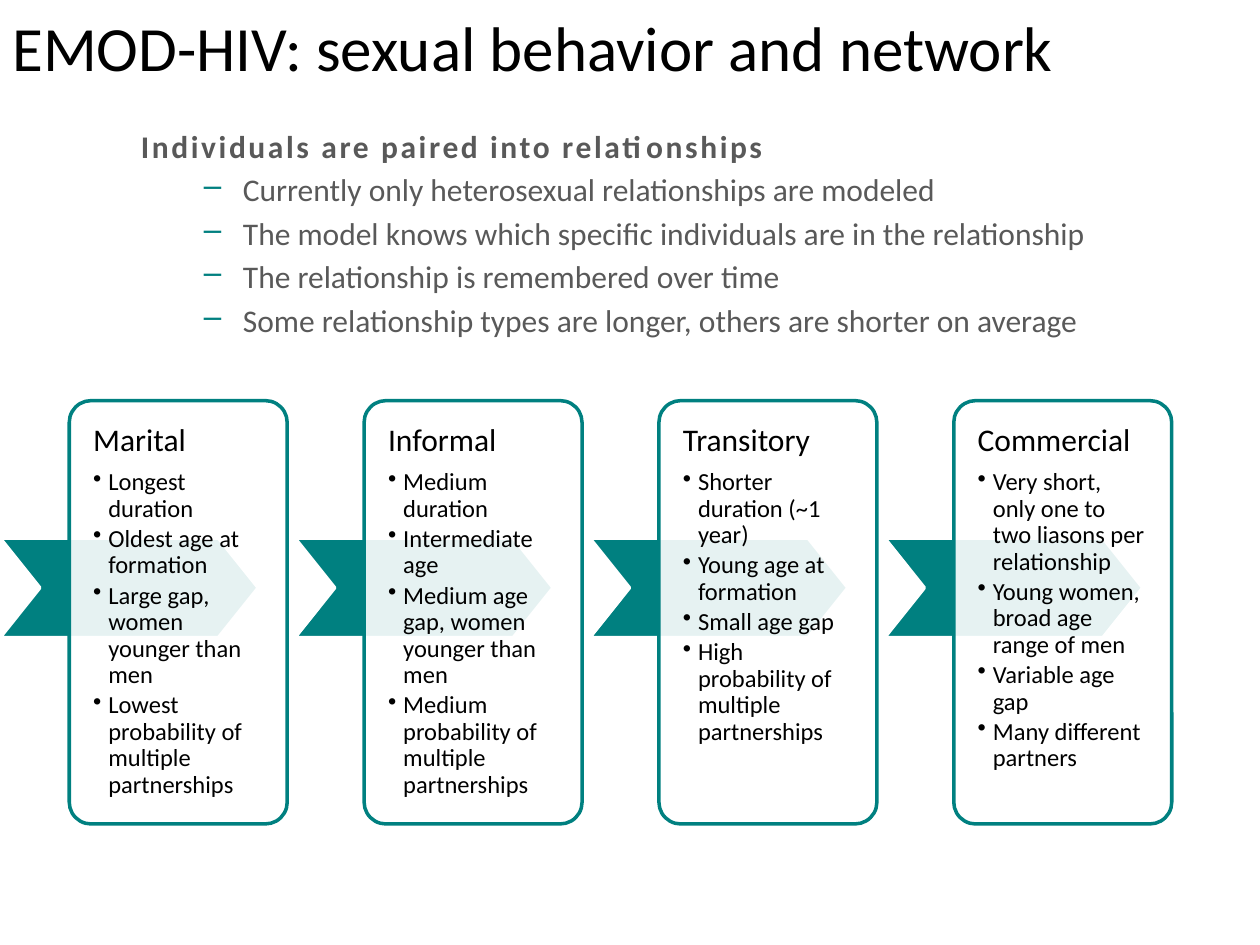
"""Build the slide on sexual behavior and relationship types in EMOD-HIV."""
from lxml.etree import SubElement
from pptx import Presentation
from pptx.dml.color import RGBColor
from pptx.enum.shapes import MSO_SHAPE as Shape
from pptx.enum.text import MSO_ANCHOR as Anchor
from pptx.oxml.ns import qn
from pptx.util import Inches, Pt

BLACK = RGBColor(0x00, 0x00, 0x00)
WHITE = RGBColor(0xFF, 0xFF, 0xFF)
GRAY = RGBColor(0x59, 0x59, 0x59)
TEAL = RGBColor(0x00, 0x80, 0x80)

TITLE = "EMOD-HIV: sexual behavior and network"
HEADING = "Individuals are paired into relationships"
POINTS = [
    "Currently only heterosexual relationships are modeled",
    "The model knows which specific individuals are in the relationship",
    "The relationship is remembered over time",
    "Some relationship types are longer, others are shorter on average",
]
TYPES = {
    "Marital": ["Longest duration", "Oldest age at formation",
                "Large gap, women younger than men",
                "Lowest probability of multiple partnerships"],
    "Informal": ["Medium duration", "Intermediate age",
                 "Medium age gap, women younger than men",
                 "Medium probability of multiple partnerships"],
    "Transitory": ["Shorter duration (~1 year)", "Young age at formation",
                   "Small age gap",
                   "High probability of multiple partnerships"],
    "Commercial": ["Very short, only one to two liasons per relationship",
                   "Young women, broad age range of men",
                   "Variable age gap", "Many different partners"],
}
PITCH = 2.34


def set_attrs(obj, values):
    for name, value in values.items():
        setattr(obj, name, value)


def add_box(shapes, box, inset=None):
    tf = shapes.add_textbox(*map(Inches, box)).text_frame
    set_attrs(tf, {"word_wrap": True, "vertical_anchor": Anchor.TOP})
    if inset is not None:
        sides = ("left", "top", "right", "bottom")
        set_attrs(tf, {f"margin_{side}": Inches(inset) for side in sides})
    return tf


def add_text(tf, text, size, color, spacing, bold=False):
    p = tf.paragraphs[0]
    if p.runs:
        p = tf.add_paragraph()
    set_attrs(p, spacing)
    r = p.add_run()
    r.text = text
    set_attrs(r.font, {"name": "Calibri", "size": Pt(size), "bold": bold})
    r.font.color.rgb = color
    return p


def set_bullet(p, char, margin, hanging, color=None):
    p.level = 1
    pPr = p._p.get_or_add_pPr()
    pPr.set("marL", str(Inches(margin)))
    pPr.set("indent", str(-Inches(hanging)))
    if color is not None:
        clr = SubElement(pPr, qn("a:buClr"))
        SubElement(clr, qn("a:srgbClr"), val=str(color))
    SubElement(pPr, qn("a:buChar"), char=char)


def add_shape(shapes, kind, box, adj, fill, line):
    sp = shapes.add_shape(kind, *map(Inches, box))
    sp.adjustments[0] = adj
    sp.shadow.inherit = False
    sp.fill.solid()
    sp.fill.fore_color.rgb = fill
    sp.line.color.rgb = line
    sp.line.width = Pt(2)
    return sp


def set_alpha(sp, percent):
    clr = sp._element.spPr.find(qn("a:solidFill")).find(qn("a:srgbClr"))
    SubElement(clr, qn("a:alpha"), val=str(percent * 1000))


def add_type(shapes, x, name, traits):
    add_shape(shapes, Shape.CHEVRON, (x, 4.27, 2.05, 0.79), 0.4, TEAL, WHITE)
    card = add_shape(shapes, Shape.ROUNDED_RECTANGLE,
                     (x + 0.55, 3.18, 1.73, 3.36), 0.1, WHITE, TEAL)
    set_alpha(card, 90)
    tf = add_box(shapes, (x + 0.6, 3.23, 1.63, 3.26), 0.14)
    add_text(tf, name, 18, BLACK, {"line_spacing": 0.9, "space_after": Pt(6.3)})
    for trait in traits:
        p = add_text(tf, trait, 14, BLACK,
                     {"line_spacing": 0.9, "space_after": Pt(2.1)})
        set_bullet(p, "•", 0.12, 0.12)


def add_points(shapes):
    tf = add_box(shapes, (1.02, 0.96, 7.96, 3.17))
    p = add_text(tf, HEADING, 18, GRAY, {}, bold=True)
    p.runs[0]._r.get_or_add_rPr().set("spc", "150")
    for point in POINTS:
        p = add_text(tf, point, 18, GRAY, {"space_before": Pt(3.2)})
        set_bullet(p, "–", 0.81, 0.31, TEAL)


def main():
    prs = Presentation()
    set_attrs(prs, {"slide_width": Inches(10), "slide_height": Inches(7.5)})
    s = prs.slides.add_slide(prs.slide_layouts[6])
    tf = add_box(s.shapes, (0, 0, 9.85, 0.53))
    add_text(tf, TITLE, 36, BLACK, {"line_spacing": Pt(44.8)})
    group = s.shapes.add_group_shape()
    for i, (name, traits) in enumerate(TYPES.items()):
        add_type(group.shapes, i * PITCH, name, traits)
    add_points(s.shapes)
    prs.save("out.pptx")


if __name__ == "__main__":
    main()
